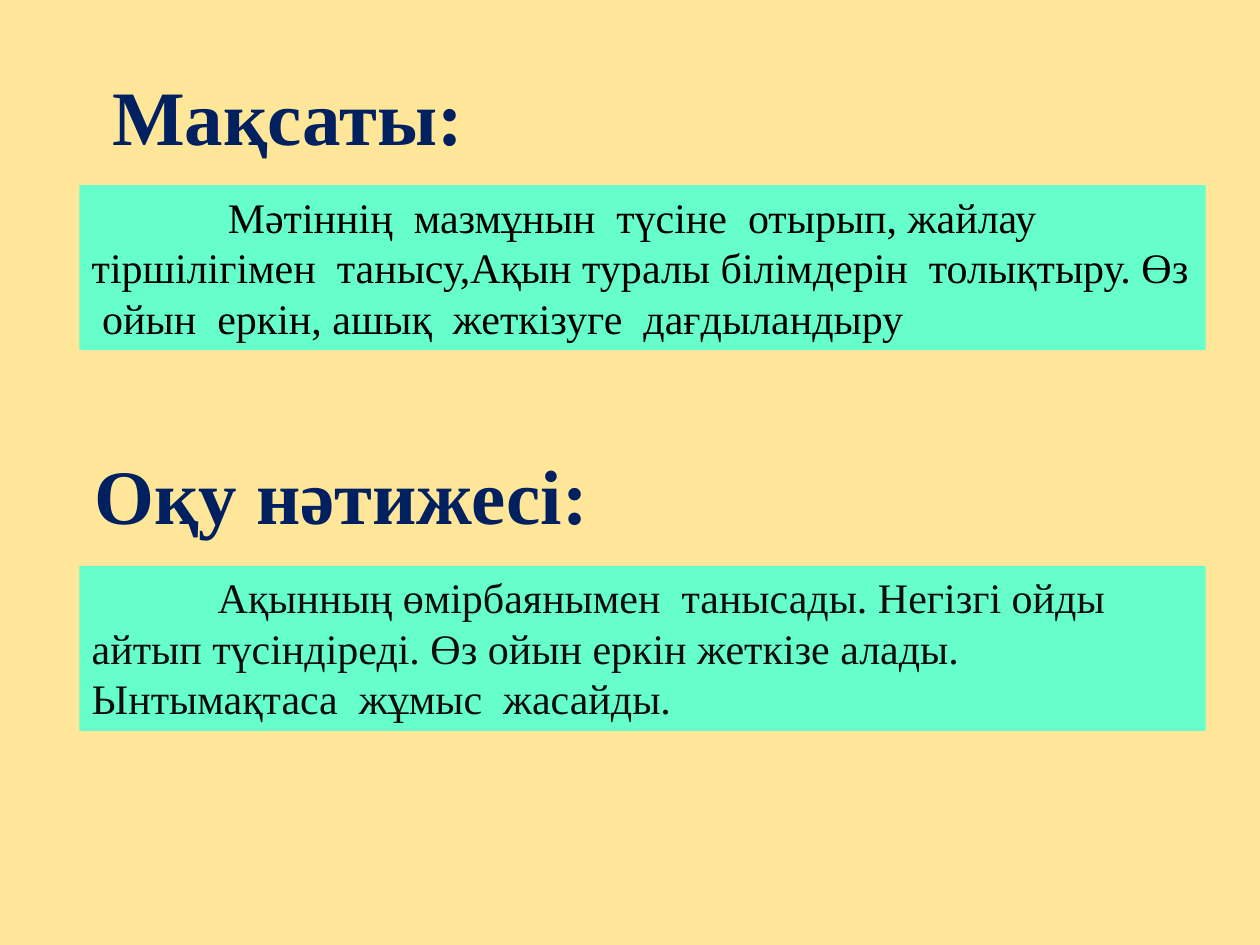
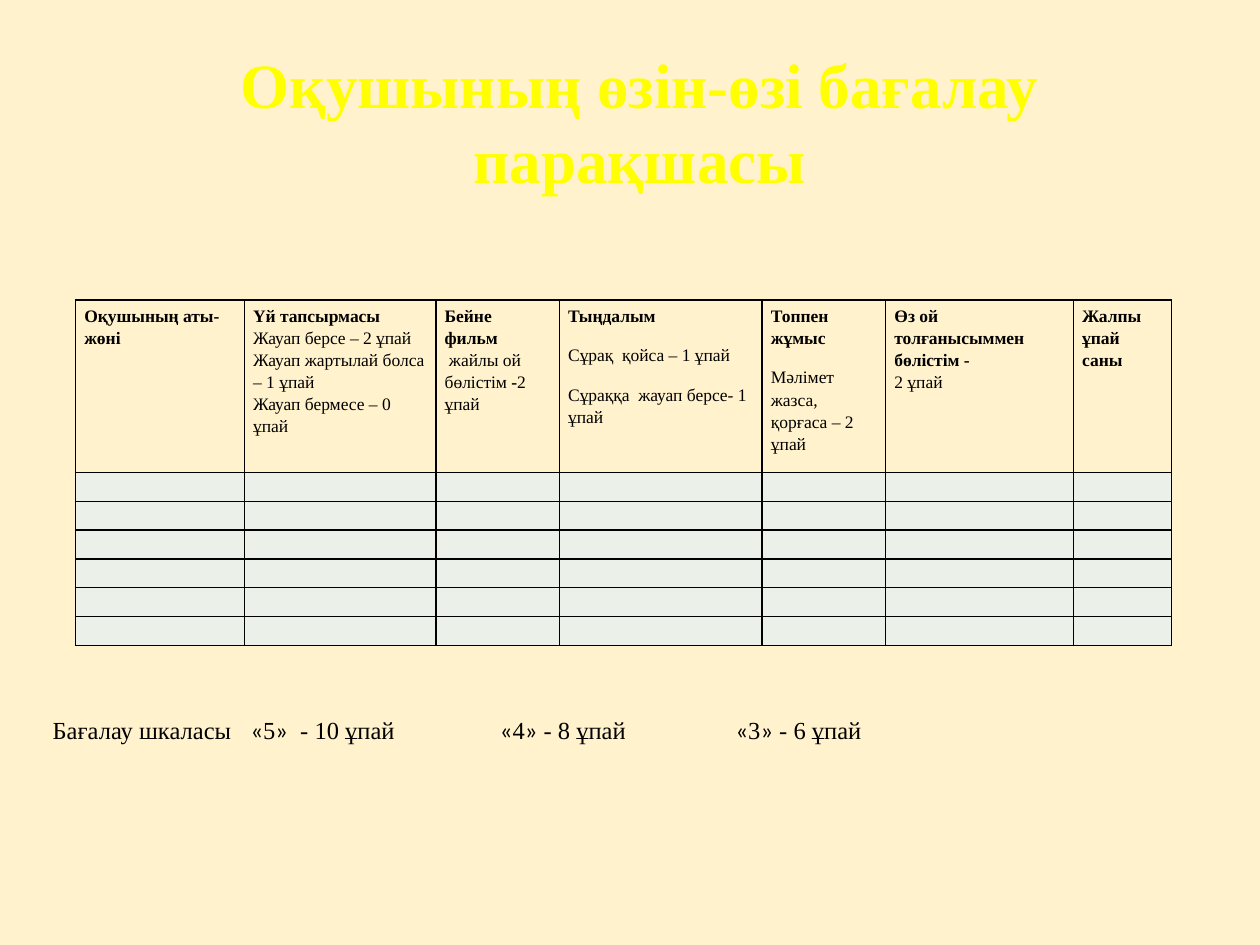
from lxml.etree import SubElement
from pptx import Presentation
from pptx.dml.color import RGBColor
from pptx.enum.shapes import MSO_SHAPE
from pptx.enum.text import MSO_ANCHOR, MSO_AUTO_SIZE, PP_ALIGN
from pptx.oxml.ns import qn
from pptx.util import Inches, Pt

# Shared look
BLACK = RGBColor(0x00, 0x00, 0x00)
SOFT_BLACK = RGBColor(0x0D, 0x0D, 0x0D)
NAVY = RGBColor(0x00, 0x20, 0x60)
YELLOW = RGBColor(0xFF, 0xFF, 0x00)
ORANGE = RGBColor(0xED, 0x7D, 0x31)
MINT = RGBColor(0x66, 0xFF, 0xCC)
PALE_GREEN = RGBColor(0xEB, 0xF1, 0xE9)
SAND = RGBColor(0xFF, 0xE6, 0x99)
CREAM = RGBColor(0xFF, 0xF2, 0xCC)
SERIF = "Times New Roman"
SANS = "Calibri"
TITLE_ONLY = 5

# Goals page: heading, heading box, body, body colour, first-line indent, panel top
GOALS = [
    ("Мақсаты:", (0.78, 0.49, 3.01, 0.84),
     "Мәтіннің  мазмұнын  түсіне  отырып, жайлау  тіршілігімен  танысу,"
     "Ақын туралы білімдерін  толықтыру. Өз  ойын  еркін, ашық  жеткізуге  дағдыландыру",
     BLACK, 1.08, 1.47),
    ("Оқу нәтижесі:", (0.63, 3.5, 4.16, 0.84),
     "Ақынның өмірбаянымен  танысады. Негізгі ойды айтып түсіндіреді. "
     "Өз ойын еркін жеткізе алады. Ынтымақтаса  жұмыс  жасайды.",
     SOFT_BLACK, 1.0, 4.49),
]

# Score sheet: column width, space after paragraphs, paragraphs of (text, bold) spans
COLUMNS = [
    (1.34, 0, [[("Оқушының аты-жөні", True)]]),
    (1.52, 0, [[("Үй тапсырмасы", True)],
               [("Жауап берсе – 2 ұпай", False)],
               [("Жауап жартылай болса – 1 ұпай", False)],
               [("Жауап бермесе – 0 ұпай", False)]]),
    (0.98, 0, [[("Бейне", True)],
               [("фильм", True)],
               [(" жайлы ой бөлістім", False), (" -", True), ("2 ұпай", False)]]),
    (1.61, 10, [[("Тыңдалым", True)],
                [("Сұрақ  қойса – 1 ұпай", False)],
                [("Сұраққа  жауап берсе- 1 ұпай", False)]]),
    (0.98, 10, [[("Топпен  жұмыс", True)],
                [("Мәлімет жазса, қорғаса – 2 ұпай", False)]]),
    (1.49, 0, [[("Өз ой толғанысыммен бөлістім -", True)],
               [("2 ұпай", False)]]),
    (0.78, 0, [[("Жалпы ұпай саны", True)]]),
]
HEADER_HEIGHT = 1.37
ROW_HEIGHT = 0.22
EMPTY_ROWS = 6

# Grade, its score, and the tab stop where it begins
GRADES = [("5", "  - 10 ұпай", 1.57), ("4", " - 8 ұпай", 3.55), ("3", " - 6 ұпай", 5.42)]


def add_line(parent, tag, color, width):
    line = SubElement(parent, qn(tag), w=str(int(Pt(width))))
    fill = SubElement(line, qn("a:solidFill"))
    SubElement(fill, qn("a:srgbClr"), val=str(color))
    return line


def add_span(para, text, size, color=BLACK, bold=False, font=SERIF, outline=None):
    span = para.add_run()
    span.text = text
    span.font.size = Pt(size)
    span.font.name = font
    span.font.bold = bold
    span.font.color.rgb = color
    if outline is not None:
        properties = span.font._element
        properties.insert(0, add_line(properties, "a:ln", outline, 1.75))


def place(shape, box):
    shape.left, shape.top, shape.width, shape.height = map(Inches, box)


def add_page(deck, color):
    page = deck.slides.add_slide(deck.slide_layouts[TITLE_ONLY])
    page.background.fill.solid()
    page.background.fill.fore_color.rgb = color
    return page


def format_heading(shape, box, text, size, color, wrap=False):
    place(shape, box)
    frame = shape.text_frame
    frame.word_wrap = wrap
    frame.auto_size = MSO_AUTO_SIZE.NONE
    frame.vertical_anchor = MSO_ANCHOR.TOP
    para = frame.paragraphs[0]
    para.alignment = PP_ALIGN.CENTER
    add_span(para, text, size, color, bold=True, outline=ORANGE)


def add_panel(page, box, text, color, indent):
    panel = page.shapes.add_shape(MSO_SHAPE.RECTANGLE, *map(Inches, box))
    panel.shadow.inherit = False
    panel.fill.solid()
    panel.fill.fore_color.rgb = MINT
    panel.line.fill.background()
    frame = panel.text_frame
    frame.word_wrap = True
    frame.vertical_anchor = MSO_ANCHOR.TOP
    para = frame.paragraphs[0]
    para.alignment = PP_ALIGN.LEFT
    para._p.get_or_add_pPr().set("indent", str(int(Inches(indent))))
    add_span(para, text, 24, color)


def format_cell(cell):
    cell.margin_left = cell.margin_right = Inches(0.07)
    cell.margin_top = cell.margin_bottom = Inches(0.03)
    for side in ("a:lnL", "a:lnR", "a:lnT", "a:lnB"):
        add_line(cell._tc.get_or_add_tcPr(), side, BLACK, 1)


def fill_header(cell, paragraphs, space_after):
    cell.fill.background()
    frame = cell.text_frame
    for index, spans in enumerate(paragraphs):
        para = frame.add_paragraph() if index else frame.paragraphs[0]
        para.line_spacing = 1.15
        para.space_after = Pt(space_after if index < len(paragraphs) - 1 else 0)
        for text, bold in spans:
            add_span(para, text, 10, bold=bold)


def add_score_table(page, left, top):
    width = sum(column[0] for column in COLUMNS)
    height = HEADER_HEIGHT + EMPTY_ROWS * ROW_HEIGHT
    table = page.shapes.add_table(EMPTY_ROWS + 1, len(COLUMNS),
                                  *map(Inches, (left, top, width, height))).table
    table.first_row = table.horz_banding = False
    for index, row in enumerate(table.rows):
        row.height = Inches(ROW_HEIGHT if index else HEADER_HEIGHT)
    for index, (column_width, space_after, paragraphs) in enumerate(COLUMNS):
        table.columns[index].width = Inches(column_width)
        for row in range(EMPTY_ROWS + 1):
            cell = table.cell(row, index)
            format_cell(cell)
            if row == 0:
                fill_header(cell, paragraphs, space_after)
                continue
            cell.fill.solid()
            cell.fill.fore_color.rgb = PALE_GREEN
            # Small type keeps the blank rows low
            cell.text_frame.paragraphs[0]._p.get_or_add_endParaRPr().set("sz", "1000")


def add_grade_scale(page, box):
    frame = page.shapes.add_textbox(*map(Inches, box)).text_frame
    frame.word_wrap = True
    frame.vertical_anchor = MSO_ANCHOR.MIDDLE
    para = frame.paragraphs[0]
    stops = SubElement(para._p.get_or_add_pPr(), qn("a:tabLst"))
    add_span(para, "Бағалау шкаласы", 14)
    for grade, score, position in GRADES:
        SubElement(stops, qn("a:tab"), pos=str(int(Inches(position))), algn="l")
        add_span(para, "\t«", 14, font=SANS)
        add_span(para, grade, 14)
        add_span(para, "»", 14, font=SANS)
        add_span(para, score, 14)


def build_goals_page(deck):
    page = add_page(deck, SAND)
    for index, (heading, box, body, color, indent, top) in enumerate(GOALS):
        shape = page.shapes.add_textbox(0, 0, 0, 0) if index else page.shapes.title
        format_heading(shape, box, heading, 44, NAVY)
        add_panel(page, (0.63, top, 8.94, 1.31), body, color, indent)


def build_score_page(deck):
    page = add_page(deck, CREAM)
    format_heading(page.shapes.title, (0.59, 0.31, 8.97, 1.31),
                   "Оқушының өзін-өзі бағалау парақшасы", 36, YELLOW, wrap=True)
    add_score_table(page, 0.6, 2.38)
    add_grade_scale(page, (0.32, 5.54, 9.5, 0.5))


def main():
    deck = Presentation()
    deck.slide_width, deck.slide_height = Inches(10), Inches(7.5)
    build_goals_page(deck)
    build_score_page(deck)
    deck.save("out.pptx")


if __name__ == "__main__":
    main()
